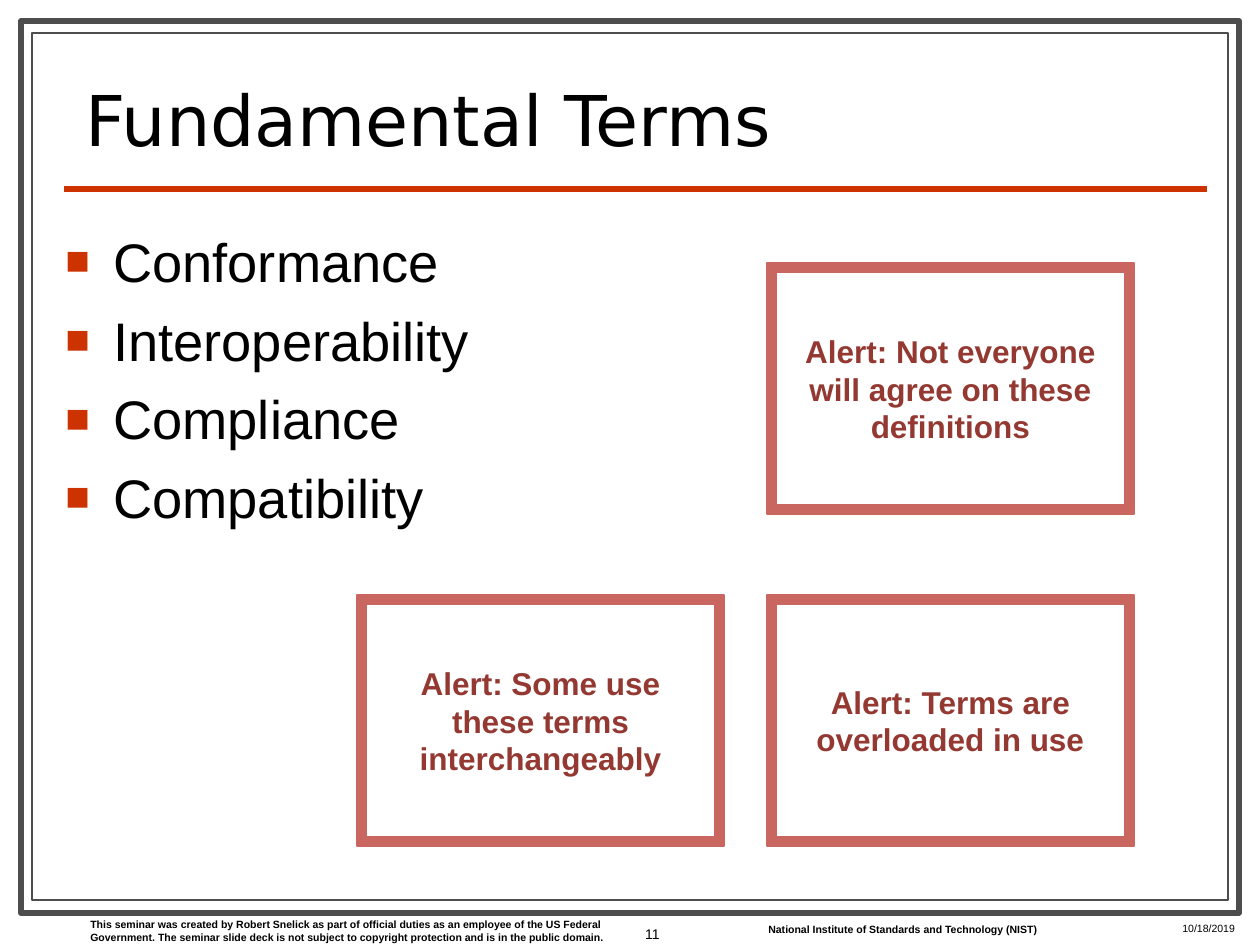
from dataclasses import dataclass

import pptx
import pptx.dml.color
import pptx.enum.shapes
import pptx.enum.text
import pptx.oxml.ns
import pptx.util
from lxml import etree

SCALE = 914400 // 126  # EMU in one px
HUES = {"ink": "000000", "paper": "FFFFFF", "border": "4D4D4D",
        "accent": "CC3300", "frame": "C96660", "alert": "943832"}
SHAPE = pptx.enum.shapes.MSO_SHAPE
ALIGN = pptx.enum.text.PP_ALIGN
ANCHOR = pptx.enum.text.MSO_ANCHOR


@dataclass
class Box:
    x: int
    y: int
    w: int
    h: int

    def emu(self) -> list[int]:
        return [v * SCALE for v in (self.x, self.y, self.w, self.h)]


@dataclass
class Label:
    box: Box
    lines: list[str]
    size: float
    bold: bool = False
    face: str = "Arial"
    align: ALIGN = ALIGN.LEFT
    anchor: ANCHOR = ANCHOR.TOP


@dataclass
class Alert:
    col: int
    row: int
    text: str


def hue(name: str) -> pptx.dml.color.RGBColor:
    return pptx.dml.color.RGBColor.from_string(HUES[name])


def style(para, size: float, color: str, bold: bool = False, face: str = "Arial") -> None:
    font = para.font
    font.size, font.bold, font.name = pptx.util.Pt(size), bold, face
    font.color.rgb = hue(color)


def add_block(slide, kind: SHAPE, box: Box, fill: str, line: str, width: float):
    shape = slide.shapes.add_shape(kind, *box.emu())
    shape.shadow.inherit = False
    shape.fill.solid()
    shape.fill.fore_color.rgb = hue(fill)
    shape.line.color.rgb = hue(line)
    shape.line.width = pptx.util.Pt(width)
    return shape


def add_rule(slide, left: int, right: int, y: int) -> None:
    rule = slide.shapes.add_connector(pptx.enum.shapes.MSO_CONNECTOR.STRAIGHT,
                                      left * SCALE, y * SCALE, right * SCALE, y * SCALE)
    rule.line.color.rgb = hue("accent")
    rule.line.width = pptx.util.Pt(3)
    etree.SubElement(rule._element.spPr, pptx.oxml.ns.qn("a:effectLst"))


def add_label(slide, label: Label):
    frame = slide.shapes.add_textbox(*label.box.emu()).text_frame
    frame.word_wrap = True
    frame.vertical_anchor = label.anchor
    frame.text = "\n".join(label.lines)
    for para in frame.paragraphs:
        para.alignment = label.align
    return frame


def add_bullet(para) -> None:
    props = para._p.get_or_add_pPr()
    hang = 48 * SCALE
    props.set("marL", str(hang))
    props.set("indent", str(-hang))
    tag = pptx.oxml.ns.qn
    tint = etree.SubElement(props, tag("a:buClr"))
    etree.SubElement(tint, tag("a:srgbClr"), val=HUES["accent"])
    etree.SubElement(props, tag("a:buSzPct"), val="75000")
    etree.SubElement(props, tag("a:buFont"), typeface="Arial")
    etree.SubElement(props, tag("a:buChar"), char="■")


def add_alert(slide, alert: Alert) -> None:
    box = Box(357 + 410 * alert.col, 263 + 332 * alert.row, 367, 251)
    shape = add_block(slide, SHAPE.FRAME, box, "frame", "frame", 0.75)
    shape.adjustments[0] = 0.038
    frame = shape.text_frame
    frame.word_wrap = True
    frame.vertical_anchor = ANCHOR.MIDDLE
    frame.text = alert.text
    para = frame.paragraphs[0]
    para.alignment = ALIGN.CENTER
    style(para, 18, "alert", bold=True)


TITLE = Label(Box(73, 53, 1124, 113), ["Fundamental Terms"], 40,
              face="DejaVu Sans", anchor=ANCHOR.BOTTOM)
TERMS = Label(Box(53, 222, 1155, 651),
              ["Conformance", "Interoperability", "Compliance", "Compatibility"], 31)
FOOTER = [
    Label(Box(78, 912, 546, 38),
          ["This seminar was created by Robert Snelick as part of official duties as an "
           "employee of the US Federal Government. The seminar slide deck is not subject "
           "to copyright protection and is in the public domain."], 6, bold=True),
    Label(Box(756, 917, 300, 25),
          ["National Institute of Standards and Technology (NIST)"], 6, bold=True),
    Label(Box(1170, 916, 80, 20), ["10/18/2019"], 6),
    Label(Box(599, 901, 73, 65), ["11"], 8, align=ALIGN.RIGHT, anchor=ANCHOR.MIDDLE),
]
ALERTS = [
    Alert(1, 0, "Alert: Not everyone will agree on these definitions"),
    Alert(1, 1, "Alert: Terms are overloaded in use"),
    Alert(0, 1, "Alert: Some use these terms interchangeably"),
]


def main() -> None:
    deck = pptx.Presentation()
    deck.slide_width, deck.slide_height = pptx.util.Inches(10), pptx.util.Inches(7.5)
    slide = deck.slides.add_slide(deck.slide_layouts[6])

    # Double border and title rule
    add_block(slide, SHAPE.RECTANGLE, Box(21, 21, 1218, 892), "paper", "border", 3.5)
    add_block(slide, SHAPE.RECTANGLE, Box(32, 33, 1196, 867), "paper", "border", 0.75)
    add_rule(slide, 64, 1207, 189)

    # Title and footer
    for label in [TITLE, *FOOTER]:
        para = add_label(slide, label).paragraphs[0]
        if label is TITLE:
            para.line_spacing = 0.8
        style(para, label.size, "ink", label.bold, label.face)

    # Bulleted terms
    for num, para in enumerate(add_label(slide, TERMS).paragraphs):
        if num:
            para.space_before = pptx.util.Pt(7.75)
        add_bullet(para)
        style(para, TERMS.size, "ink")

    # Alert frames
    for alert in ALERTS:
        add_alert(slide, alert)

    deck.save("out.pptx")


if __name__ == "__main__":
    main()
